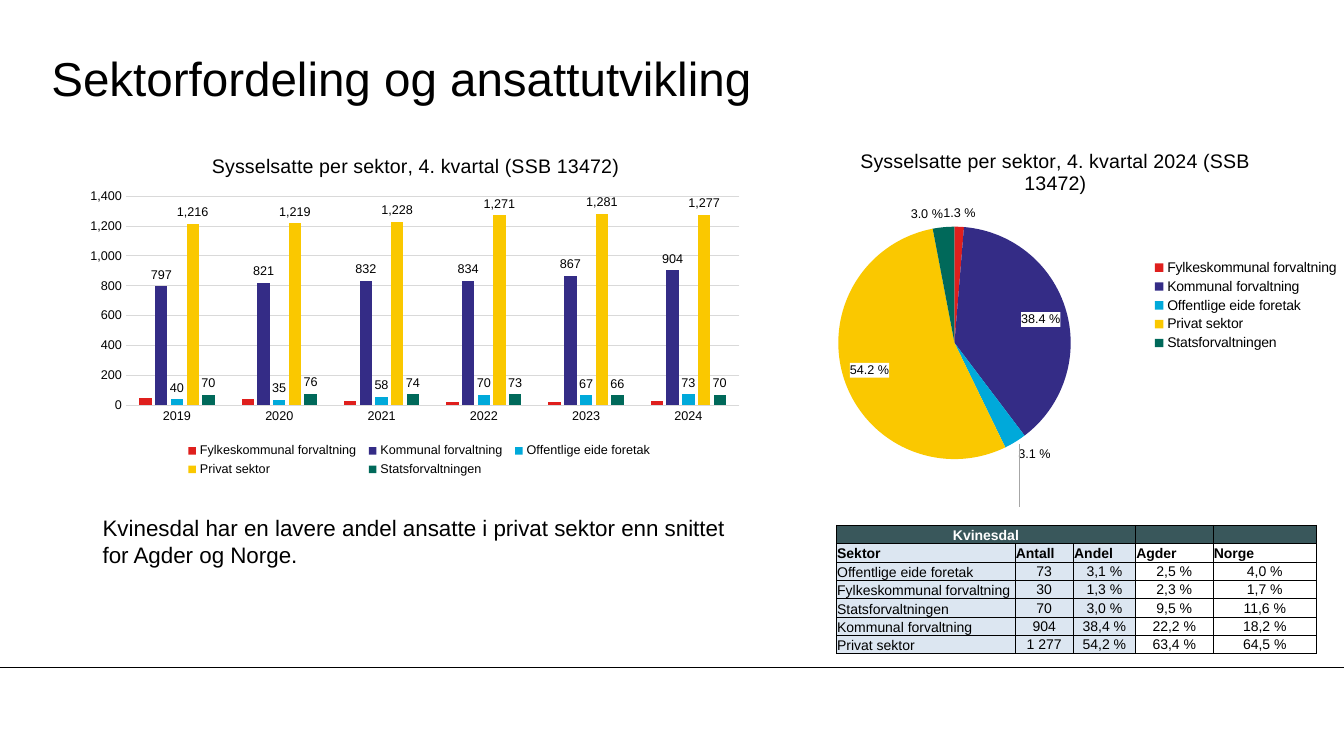
from copy import deepcopy
from lxml import etree
from pptx import Presentation
from pptx import util as u
from pptx.chart import data
from pptx.dml.color import RGBColor
from pptx.enum import chart as ch, shapes, text
from pptx.oxml import ns

Pt = u.Pt
theme = {
    "font": "Arial", "black": "000000", "white": "FFFFFF", "grid": "D9D9D9",
    "lead": "A6A6A6", "head": "39575B", "pale": "DCE6F1",
    "parts": ["DF1F1D", "342C86", "00A9DA", "FAC800", "00695A"],
    "title": 34, "body": 16, "chart": 14, "cell": 10, "label": 9,
}


def style(font, size, color="black", bold=False):
    font.name, font.size, font.bold = theme["font"], Pt(size), bold
    font.color.rgb = RGBColor.from_string(theme[color])


def place(part, index, inner, x, y, w, h):
    for old in part.findall(ns.qn("c:layout")):
        part.remove(old)
    layout = etree.Element(ns.qn("c:layout"))
    manual = etree.SubElement(layout, ns.qn("c:manualLayout"))
    rules = [("layoutTarget", "inner")] if inner else []
    rules += [("xMode", "edge"), ("yMode", "edge"), ("x", x), ("y", y), ("w", w), ("h", h)]
    for name, value in rules:
        etree.SubElement(manual, ns.qn("c:" + name)).set("val", str(value))
    part.insert(index, layout)


deck = Presentation()
deck.slide_width, deck.slide_height = Pt(960), Pt(540)
slide = deck.slides.add_slide(deck.slide_layouts[5])

title = slide.shapes.title
title.left, title.top, title.width, title.height = Pt(36.7), Pt(28), Pt(799), Pt(54)
frame = title.text_frame
frame.text = "Sektorfordeling og ansattutvikling"
frame.margin_left = frame.margin_right = frame.margin_top = frame.margin_bottom = 0
frame.vertical_anchor = text.MSO_ANCHOR.MIDDLE
frame.paragraphs[0].alignment = text.PP_ALIGN.LEFT
style(frame.paragraphs[0].runs[0].font, theme["title"])

note = slide.shapes.add_textbox(Pt(66.2), Pt(363.6), Pt(461.5), Pt(46)).text_frame
note.word_wrap = True
note.text = "Kvinesdal har en lavere andel ansatte i privat sektor enn snittet for Agder og Norge."
style(note.paragraphs[0].runs[0].font, theme["body"])

sectors = ["Fylkeskommunal forvaltning", "Kommunal forvaltning", "Offentlige eide foretak",
           "Privat sektor", "Statsforvaltningen"]
staff = [
    [50, 40, 30, 20, 20, 30],
    [797, 821, 832, 834, 867, 904],
    [40, 35, 58, 70, 67, 73],
    [1216, 1219, 1228, 1271, 1281, 1277],
    [70, 76, 74, 73, 66, 70],
]
trend = data.CategoryChartData()
trend.categories = [str(year) for year in range(2019, 2025)]
for name, values in zip(sectors, staff):
    trend.add_series(name, values)
share = data.CategoryChartData()
share.categories = sectors
share.add_series("Series 1", [1.3, 38.4, 3.1, 54.2, 3])

kinds, spots = ch.XL_CHART_TYPE, ch.XL_LEGEND_POSITION
plans = [
    (kinds.COLUMN_CLUSTERED, trend, (56.2, 98.6, 481.7, 244.8),
     "Sysselsatte per sektor, 4. kvartal (SSB 13472)", spots.BOTTOM, theme["label"],
     (0.07, 0.17, 0.91, 0.61), (0.15, 0.88, 0.71, 0.12)),
    (kinds.PIE, share, (547.9, 95, 412, 267.8),
     "Sysselsatte per sektor, 4. kvartal 2024 (SSB\n13472)", spots.RIGHT, theme["cell"],
     (0.11, 0.25, 0.43, 0.62), (0.66, 0.33, 0.34, 0.26)),
]
charts = []
for kind, source, box, head, spot, size, plot, key in plans:
    chart = slide.shapes.add_chart(kind, *[Pt(n) for n in box], source).chart
    style(chart.font, theme["cell"])
    chart.has_title = True
    chart.chart_title.text_frame.text = head
    for para in chart.chart_title.text_frame.paragraphs:
        style(para.runs[0].font, theme["chart"])
    chart.has_legend = True
    chart.legend.position = spot
    chart.legend.include_in_layout = False
    style(chart.legend.font, size)
    place(chart._chartSpace.chart.plotArea, 0, True, *plot)
    place(chart.legend._element, 1, False, *key)
    charts.append(chart)
bars, pie = charts

plot = bars.plots[0]
plot.gap_width, plot.overlap, plot.vary_by_categories = 219, -27, False
grid = RGBColor.from_string(theme["grid"])
for axis in (bars.category_axis, bars.value_axis):
    axis.major_tick_mark = axis.minor_tick_mark = ch.XL_TICK_MARK.NONE
    style(axis.tick_labels.font, theme["label"])
bars.category_axis.format.line.color.rgb = grid
bars.category_axis.format.line.width = Pt(0.75)
scale = bars.value_axis
scale.minimum_scale, scale.maximum_scale, scale.major_unit = 0, 1400, 200
scale.tick_labels.number_format = "#,##0"
scale.tick_labels.number_format_is_linked = False
scale.format.line.fill.background()
scale.major_gridlines.format.line.color.rgb = grid
scale.major_gridlines.format.line.width = Pt(0.75)
for index, series in enumerate(plot.series):
    series.format.fill.solid()
    series.format.fill.fore_color.rgb = RGBColor.from_string(theme["parts"][index])
    if index:
        labels = series.data_labels
        labels.show_value = True
        labels.number_format, labels.number_format_is_linked = "#,##0", False
        labels.position = ch.XL_LABEL_POSITION.OUTSIDE_END
        style(labels.font, theme["label"])

pie.plots[0].vary_by_categories = True
series = pie.plots[0].series[0]
labels = series.data_labels
labels.show_value, labels.show_percentage = False, True
labels.number_format, labels.number_format_is_linked = "0.0\\ %", False
labels.position = ch.XL_LABEL_POSITION.OUTSIDE_END
style(labels.font, theme["label"])
for index, color in enumerate(theme["parts"]):
    fill = series.points[index].format.fill
    fill.solid()
    fill.fore_color.rgb = RGBColor.from_string(color)
looks = [labels._element.find(ns.qn("c:" + name)) for name in ("numFmt", "txPr")]
for index in (1, 3):
    series.points[index].data_label.position = ch.XL_LABEL_POSITION.INSIDE_END
for label in labels._element.findall(ns.qn("c:dLbl")):
    for name in ("spPr", "txPr"):
        for old in label.findall(ns.qn("c:" + name)):
            label.remove(old)
    back = etree.Element(ns.qn("c:spPr"))
    fill = etree.SubElement(back, ns.qn("a:solidFill"))
    etree.SubElement(fill, ns.qn("a:srgbClr")).set("val", theme["white"])
    for spot, part in enumerate([deepcopy(looks[0]), back, deepcopy(looks[1])], 1):
        label.insert(spot, part)
    label.find(ns.qn("c:showVal")).set("val", "0")
    label.find(ns.qn("c:showPercent")).set("val", "1")

rows = [
    ["Kvinesdal", "", "", "", ""],
    ["Sektor", "Antall", "Andel", "Agder", "Norge"],
    ["Offentlige eide foretak", "73", "3,1 %", "2,5 %", "4,0 %"],
    ["Fylkeskommunal forvaltning", "30", "1,3 %", "2,3 %", "1,7 %"],
    ["Statsforvaltningen", "70", "3,0 %", "9,5 %", "11,6 %"],
    ["Kommunal forvaltning", "904", "38,4 %", "22,2 %", "18,2 %"],
    ["Privat sektor", "1 277", "54,2 %", "63,4 %", "64,5 %"],
]
widths = [127.6, 41.7, 44.4, 55.4, 73.9]
high = 13.15
table = slide.shapes.add_table(len(rows), len(widths), Pt(597.4), Pt(375.1),
                               Pt(sum(widths)), Pt(high * len(rows))).table
for column, width in zip(table.columns, widths):
    column.width = Pt(width)
for r, row in enumerate(rows):
    table.rows[r].height = Pt(high)
    for c, words in enumerate(row):
        cell = table.cell(r, c)
        cell.text = words
        cell.margin_left = cell.margin_right = cell.margin_top = Pt(0.6)
        cell.margin_bottom = 0
        data_cell = r > 1 and c > 0
        cell.vertical_anchor = text.MSO_ANCHOR.MIDDLE if data_cell else text.MSO_ANCHOR.BOTTOM
        para = cell.text_frame.paragraphs[0]
        para.alignment = text.PP_ALIGN.CENTER if data_cell or r == 0 else text.PP_ALIGN.LEFT
        for run in para.runs:
            style(run.font, theme["cell"], "white" if r == 0 else "black", r < 2)
        if not words:
            etree.SubElement(para._p, ns.qn("a:endParaRPr")).set("sz", str(theme["cell"] * 100))
        props = cell._tc.get_or_add_tcPr()
        for side in ("lnL", "lnR", "lnT", "lnB"):
            edge = etree.SubElement(props, ns.qn("a:" + side), w=str(Pt(0.5)))
            ink = etree.SubElement(edge, ns.qn("a:solidFill"))
            etree.SubElement(ink, ns.qn("a:srgbClr")).set("val", theme["black"])
        cell.fill.solid()
        tone = "head" if r == 0 else "pale" if c < 3 else "white"
        cell.fill.fore_color.rgb = RGBColor.from_string(theme[tone])
table.cell(0, 0).merge(table.cell(0, 2))

rules = [((0, 476.6, 960, 476.6), "black"), ((728, 317, 728, 362), "lead")]
for ends, color in rules:
    rule = slide.shapes.add_connector(shapes.MSO_CONNECTOR.STRAIGHT, *[Pt(n) for n in ends])
    rule.line.color.rgb = RGBColor.from_string(theme[color])
    rule.line.width = Pt(0.75)
    etree.SubElement(rule._element.spPr, ns.qn("a:effectLst"))

deck.save("out.pptx")
